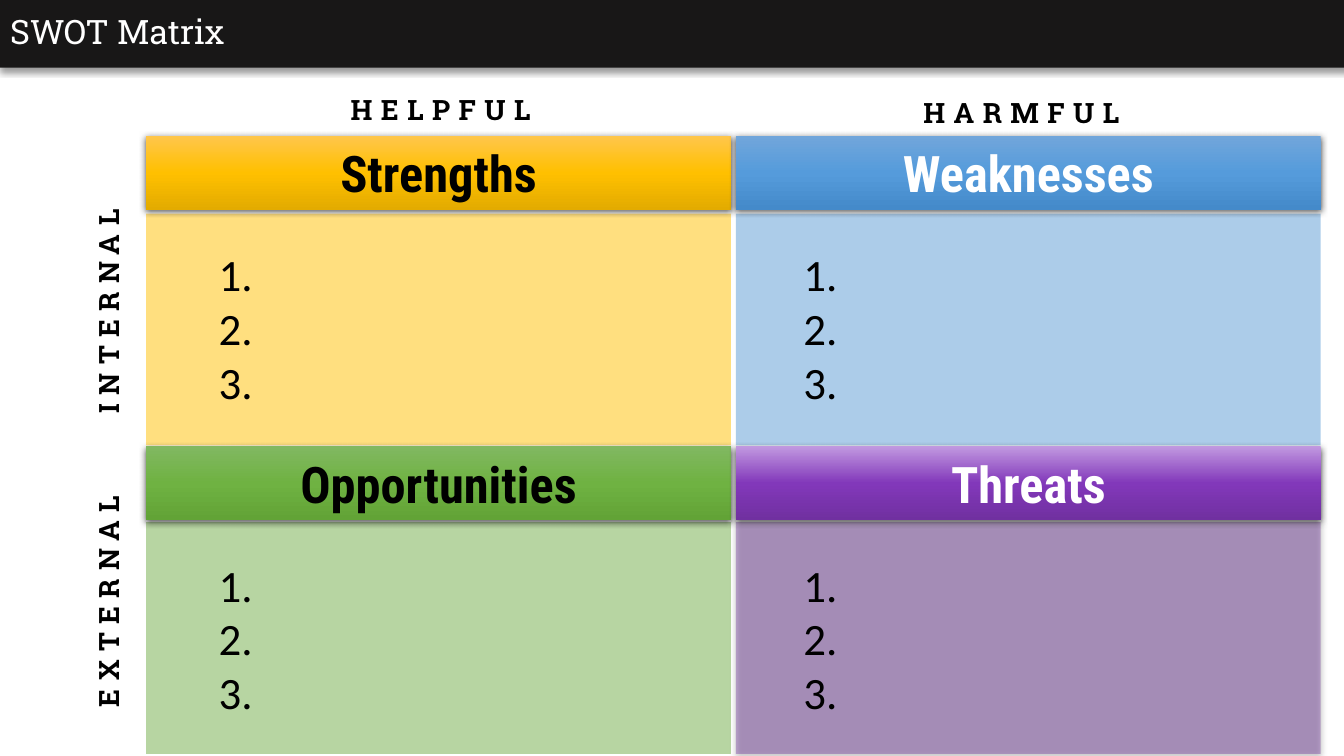
import pptx
import pptx.dml.color
import pptx.enum.shapes
import pptx.enum.text
import pptx.oxml.ns
import pptx.util
from lxml import etree

Inches = pptx.util.Inches
Align = pptx.enum.text.PP_ALIGN
Anchor = pptx.enum.text.MSO_ANCHOR
AutoSize = pptx.enum.text.MSO_AUTO_SIZE
qn = pptx.oxml.ns.qn

COLOURS = {
    "bar": "181717", "black": "000000", "white": "FFFFFF",
    "yellow": "FFC000", "blue": "5B9BD5", "green": "70AD47", "purple": "7030A0",
}
TITLE = "SWOT Matrix"
ITEMS = ["1.", "2.", "3."]
QUADRANTS = [
    {"name": "Strengths", "column": 0, "row": 0, "text": "black", "panel": "yellow",
     "opacity": 50, "gradient": ["FFC64B", "FFC000", "E3AB00"]},
    {"name": "Weaknesses", "column": 1, "row": 0, "text": "white", "panel": "blue",
     "opacity": 50, "gradient": ["71A6DB", "559BDB", "448ACA"]},
    {"name": "Opportunities", "column": 0, "row": 1, "text": "black", "panel": "green",
     "opacity": 50, "gradient": ["81B861", "6FB242", "62A336"]},
    {"name": "Threats", "column": 1, "row": 1, "text": "white", "panel": "purple",
     "opacity": 37, "gradient": ["C198E0", "8238BA", "7030A0"]},
]
AXIS_LABELS = [
    ("HELPFUL", 2.07, 0.87, 4.6, 0),
    ("HARMFUL", 7.83, 0.9, 4.6, 0),
    ("INTERNAL", -0.48, 2.87, 3.12, 270),
    ("EXTERNAL", -0.48, 5.75, 3.12, 270),
]
LEFT, COLUMN_STEP, WIDTH = 1.45, 5.85, 5.8
HEADER_TOP, HEADER_STEP, HEADER_HEIGHT = 1.35, 3.08, 0.73
PANEL_TOP, PANEL_STEP, PANEL_HEIGHT = 2.12, 3.06, 2.3
LIST_LEFT, LIST_STEP, LIST_TOP = 2.07, 5.8, 2.4

TITLE_FONT = {"name": "Roboto Slab", "size": pptx.util.Pt(24), "bold": False}
HEADER_FONT = {"name": "Roboto Condensed", "size": pptx.util.Pt(36), "bold": True}
LIST_FONT = {"name": "Calibri", "size": pptx.util.Pt(32)}
LABEL_FONT = {"name": "Roboto Slab", "size": pptx.util.Pt(20), "bold": True}


def rgb(name):
    return pptx.dml.color.RGBColor.from_string(COLOURS[name])


def add_colour(parent, value, opacity=100):
    colour = etree.SubElement(parent, qn("a:srgbClr"), val=value)
    if opacity < 100:
        etree.SubElement(colour, qn("a:alpha"), val=str(opacity * 1000))


def add_shadow(shape, opacity, blur, distance):
    effects = shape._element.spPr.find(qn("a:effectLst"))
    shadow = etree.SubElement(
        effects, qn("a:outerShdw"), blurRad=str(pptx.util.Pt(blur)),
        dist=str(pptx.util.Pt(distance)), dir="5400000", algn="t", rotWithShape="0")
    add_colour(shadow, COLOURS["black"], opacity)


def write(shape, lines, font, colour, alignment, spacing=0):
    frame = shape.text_frame
    frame.word_wrap = True
    for index, line in enumerate(lines):
        para = frame.paragraphs[0] if index == 0 else frame.add_paragraph()
        para.alignment = alignment
        span = para.add_run()
        span.text = line
        for key, value in font.items():
            setattr(span.font, key, value)
        span.font.color.rgb = rgb(colour)
        if spacing:
            span._r.get_or_add_rPr().set("spc", str(spacing * 100))


def add_box(page, left, top, width, height):
    box = page.shapes.add_shape(
        pptx.enum.shapes.MSO_SHAPE.RECTANGLE,
        Inches(left), Inches(top), Inches(width), Inches(height))
    box.line.fill.background()
    box.shadow.inherit = False
    return box


def add_title(page):
    title = page.shapes.title
    place = {"left": 0, "top": -0.06, "width": 13.42, "height": 0.73}
    for key, value in place.items():
        setattr(title, key, Inches(value))
    title.fill.solid()
    title.fill.fore_color.rgb = rgb("bar")
    title.shadow.inherit = False
    add_shadow(title, 40, 4, 3)
    title.text_frame.auto_size = AutoSize.NONE
    title.text_frame.vertical_anchor = Anchor.MIDDLE
    write(title, [TITLE], TITLE_FONT, "white", Align.LEFT)


def add_panel(page, quadrant):
    panel = add_box(page, LEFT + quadrant["column"] * COLUMN_STEP,
                    PANEL_TOP + quadrant["row"] * PANEL_STEP, WIDTH, PANEL_HEIGHT)
    panel.fill.solid()
    panel.fill.fore_color.rgb = rgb(quadrant["panel"])
    colour = panel._element.spPr.find(qn("a:solidFill"))[0]
    etree.SubElement(colour, qn("a:alpha"), val=str(quadrant["opacity"] * 1000))
    if quadrant["name"] == "Threats":
        add_shadow(panel, 63, 4.5, 1.5)


def add_header(page, quadrant):
    header = add_box(page, LEFT + quadrant["column"] * COLUMN_STEP,
                     HEADER_TOP + quadrant["row"] * HEADER_STEP, WIDTH, HEADER_HEIGHT)
    header.fill.gradient()
    header.fill.gradient_angle = 270
    stops = header._element.spPr.find(qn("a:gradFill")).find(qn("a:gsLst"))
    for stop in list(stops):
        stops.remove(stop)
    for index, value in enumerate(quadrant["gradient"]):
        stop = etree.SubElement(stops, qn("a:gs"), pos=str(index * 50000))
        add_colour(stop, value)
    add_shadow(header, 63, 4.5, 1.5)
    header.text_frame.vertical_anchor = Anchor.MIDDLE
    write(header, [quadrant["name"]], HEADER_FONT, quadrant["text"], Align.CENTER)


def add_text(page, left, top, width, height):
    box = page.shapes.add_textbox(Inches(left), Inches(top), Inches(width), Inches(height))
    box.text_frame.auto_size = AutoSize.SHAPE_TO_FIT_TEXT
    return box


def main():
    deck = pptx.Presentation()
    deck.slide_width, deck.slide_height = Inches(13.33), Inches(7.5)
    page = deck.slides.add_slide(deck.slide_layouts[5])
    add_title(page)
    for quadrant in QUADRANTS:
        add_panel(page, quadrant)
    for quadrant in QUADRANTS:
        add_header(page, quadrant)
    for quadrant in QUADRANTS:
        box = add_text(page, LIST_LEFT + quadrant["column"] * LIST_STEP,
                       LIST_TOP + quadrant["row"] * HEADER_STEP, 4.56, 1.72)
        write(box, ITEMS, LIST_FONT, "black", Align.LEFT)
    for label, left, top, width, rotation in AXIS_LABELS:
        box = add_text(page, left, top, width, 0.44)
        box.rotation = rotation
        write(box, [label], LABEL_FONT, "black", Align.CENTER, spacing=6)
    deck.save("out.pptx")


if __name__ == "__main__":
    main()
